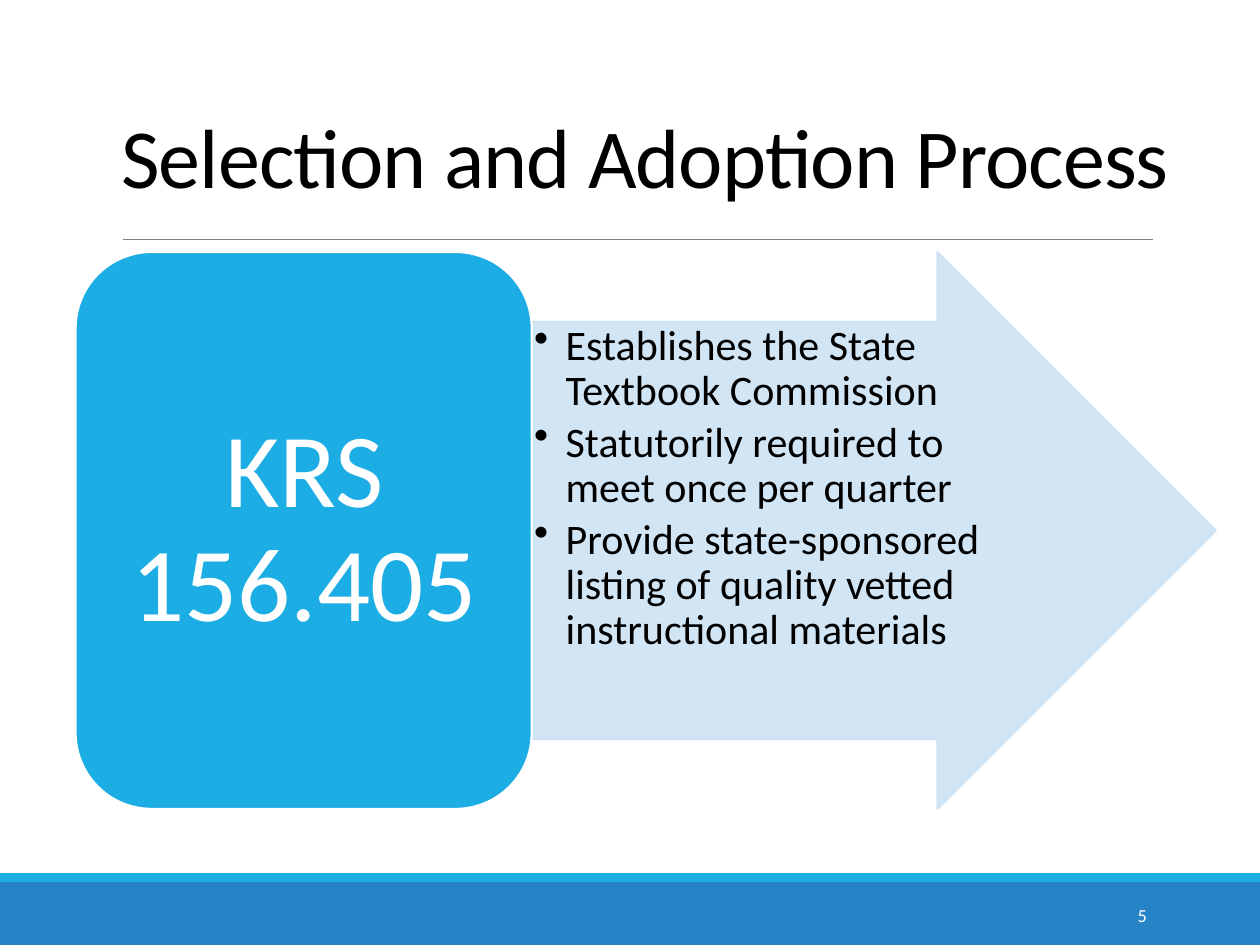
import pptx
import pptx.util
import pptx.dml.color
import pptx.enum.shapes
import pptx.enum.text
import pptx.oxml.ns
from lxml import etree

Inches = pptx.util.Inches
Pt = pptx.util.Pt
Shapes = pptx.enum.shapes.MSO_SHAPE
Align = pptx.enum.text.PP_ALIGN
Anchor = pptx.enum.text.MSO_ANCHOR
qn = pptx.oxml.ns.qn

COLORS = {
    "footer": "2683C6",
    "accent": "1CADE4",
    "pale": "CDE3F5",
    "rule": "808080",
    "dark": "000000",
    "light": "FFFFFF",
}
POINTS = [
    "Establishes the State Textbook Commission",
    "Statutorily required to meet once per quarter",
    "Provide state-sponsored listing of quality vetted instructional materials",
]


class SlideBuilder:
    """Hold the style and the current slide, and add elements to it."""

    font = "Calibri"

    def __init__(self, slide):
        self.slide = slide

    def paint(self, color_format, color, alpha=None):
        color_format.rgb = pptx.dml.color.RGBColor.from_string(COLORS[color])
        return alpha

    def fade(self, shape, percent):
        for color in shape._element.spPr.iter(qn("a:srgbClr")):
            etree.SubElement(color, qn("a:alpha"), val=str(percent * 1000))

    def shape(self, kind, box, fill, line=None, adjustments=(), opacity=None):
        shape = self.slide.shapes.add_shape(kind, *map(Inches, box))
        shape.shadow.inherit = False
        shape.fill.solid()
        self.paint(shape.fill.fore_color, fill)
        if line:
            self.paint(shape.line.color, line)
            shape.line.width = Pt(1.25)
        else:
            shape.line.fill.background()
        for index, value in enumerate(adjustments):
            shape.adjustments[index] = value
        if opacity:
            self.fade(shape, opacity)

    def rule(self, left, right, top):
        connector = self.slide.shapes.add_connector(
            pptx.enum.shapes.MSO_CONNECTOR.STRAIGHT,
            Inches(left), Inches(top), Inches(right), Inches(top))
        self.paint(connector.line.color, "rule")
        connector.line.width = Pt(0.5)
        etree.SubElement(connector._element.spPr, qn("a:effectLst"))

    def text(self, box, lines, size, color, align=Align.LEFT, anchor=Anchor.TOP,
             insets=(0.1, 0.05), line_spacing=1.0, space_after=0, tracking=None,
             bullets=False):
        frame = self.slide.shapes.add_textbox(*map(Inches, box)).text_frame
        frame.word_wrap = True
        frame.vertical_anchor = anchor
        frame.margin_left = frame.margin_right = Inches(insets[0])
        frame.margin_top = frame.margin_bottom = Inches(insets[1])
        frame.text = "\n".join(lines)
        for paragraph in frame.paragraphs:
            paragraph.alignment = align
            paragraph.line_spacing = line_spacing
            paragraph.space_after = Pt(space_after)
            if bullets:
                self.bullet(paragraph)
            for run in paragraph.runs:
                run.font.name = self.font
                run.font.size = Pt(size)
                self.paint(run.font.color, color)
                if tracking:
                    run.font._element.set("spc", str(round(tracking * 100)))

    def bullet(self, paragraph):
        properties = paragraph._p.get_or_add_pPr()
        properties.set("marL", str(Inches(0.25)))
        properties.set("indent", str(Inches(-0.25)))
        etree.SubElement(properties, qn("a:buChar"), char="•")


def main():
    presentation = pptx.Presentation()
    presentation.slide_width = Inches(10)
    presentation.slide_height = Inches(7.5)
    builder = SlideBuilder(presentation.slides.add_slide(presentation.slide_layouts[6]))

    builder.shape(Shapes.RECTANGLE, (0, 7, 10, 0.5), "footer")
    builder.shape(Shapes.RECTANGLE, (0, 6.93, 10, 0.07), "accent")
    builder.rule(0.98, 9.15, 1.9)
    builder.text((-0.38, 0.74, 11, 0.94), ["Selection and Adoption Process"], 48, "dark",
                 Align.CENTER, Anchor.BOTTOM, line_spacing=0.85, tracking=-0.5)

    builder.shape(Shapes.RIGHT_ARROW, (4.22, 2, 5.43, 4.42), "pale", "pale",
                  adjustments=(0.75, 0.5), opacity=90)
    builder.text((4.22, 2.55, 3.77, 3.31), POINTS, 24, "dark", insets=(0.02, 0.02),
                 line_spacing=0.9, space_after=3.6, bullets=True)

    builder.shape(Shapes.ROUNDED_RECTANGLE, (0.6, 2, 3.62, 4.42), "accent", "light")
    builder.text((0.78, 2.18, 3.27, 4.06), ["KRS 156.405"], 60, "light", Align.CENTER,
                 Anchor.MIDDLE, insets=(0.25, 0.12), line_spacing=0.9, space_after=21)

    builder.text((8.12, 7.06, 1.08, 0.4), ["5"], 10.5, "light", Align.RIGHT, Anchor.MIDDLE)
    presentation.save("out.pptx")


if __name__ == "__main__":
    main()
